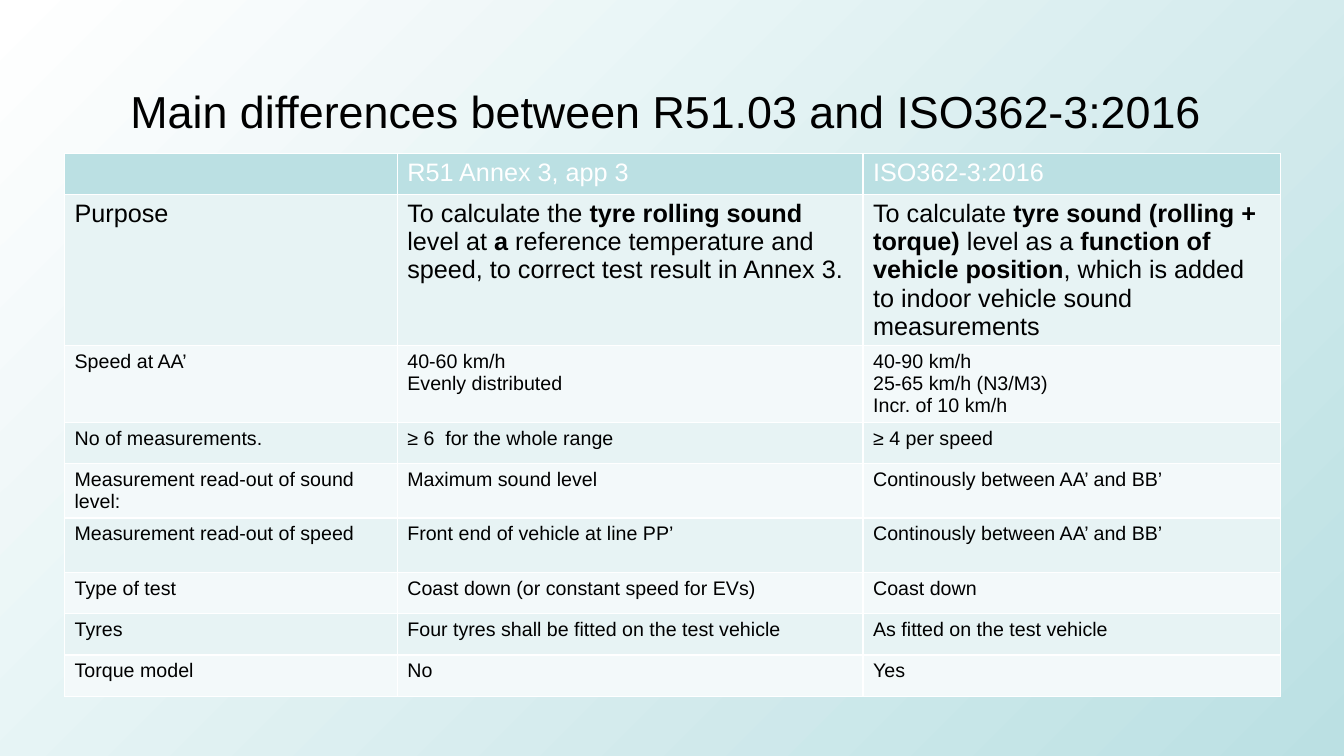
from dataclasses import dataclass
from pptx import Presentation
from pptx.dml.color import RGBColor
from pptx.enum.text import MSO_ANCHOR, MSO_AUTO_SIZE, PP_ALIGN
from pptx.util import Inches, Pt

TITLE = "Main differences between R51.03 and ISO362-3:2016 "
ROWS = [
    ("", "R51 Annex 3, app 3", "ISO362-3:2016"),
    ("Purpose",
     "To calculate the *tyre rolling sound *level at *a *reference temperature and speed, "
     "to correct test result in Annex 3.",
     "To calculate *tyre sound (rolling + torque)* level as a *function of vehicle position*, "
     "which is added to indoor vehicle sound measurements"),
    ("Speed at AA’", "40-60 km/h\nEvenly distributed",
     "40-90 km/h\n25-65 km/h (N3/M3)\nIncr. of 10 km/h"),
    ("No of measurements.", "≥ 6  for the whole range", "≥ 4 per speed"),
    ("Measurement read-out of sound level:", "Maximum sound level",
     "Continously between AA’ and BB’"),
    ("Measurement read-out of speed", "Front end of vehicle at line PP’",
     "Continously between AA’ and BB’"),
    ("Type of test", "Coast down (or constant speed for EVs)", "Coast down"),
    ("Tyres", "Four tyres shall be fitted on the test vehicle", "As fitted on the test vehicle"),
    ("Torque model", "No", "Yes"),
]
WIDTHS = (3.3, 4.62, 4.14)
BASE = 0.41
TALL = {1: 1.5, 2: 0.76, 4: 0.54, 5: 0.54}


@dataclass(frozen=True)
class Theme:
    font: str = "Arial"
    ink: str = "000000"
    white: str = "FFFFFF"
    teal: str = "BBE0E3"
    bands: tuple = ("F3F9FA", "E7F3F4")
    title: int = 32
    large: int = 18
    small: int = 14


THEME = Theme()


def style(font, size, color, bold=False):
    font.name = THEME.font
    font.size = Pt(size)
    font.bold = bold
    font.color.rgb = RGBColor.from_string(color)


def paint(slide):
    fill = slide.background.fill
    fill.gradient()
    fill.gradient_angle = 315
    for stop, place, color in zip(fill.gradient_stops, (0, 1), (THEME.white, THEME.teal)):
        stop.position = place
        stop.color.rgb = RGBColor.from_string(color)


def head(slide):
    title = slide.shapes.title
    title.left, title.top = Inches(0.92), Inches(0.72)
    title.width, title.height = Inches(11.5), Inches(0.54)
    frame = title.text_frame
    frame.text = TITLE
    frame.auto_size = MSO_AUTO_SIZE.NONE
    frame.vertical_anchor = MSO_ANCHOR.TOP
    frame.margin_top = Inches(0.11)
    para = frame.paragraphs[0]
    para.alignment = PP_ALIGN.CENTER
    style(para.runs[0].font, THEME.title, THEME.ink)


def write(cell, text, size, color):
    frame = cell.text_frame
    frame.text = text.replace("*", "")
    for para, line in zip(frame.paragraphs, text.split("\n")):
        style(para.font, size, color)
        para.text = ""
        for part, words in enumerate(line.split("*")):
            if words:
                run = para.add_run()
                run.text = words
                style(run.font, size, color, part % 2 == 1)


def grid(slide):
    highs = [TALL.get(row, BASE) for row in range(len(ROWS))]
    table = slide.shapes.add_table(
        len(ROWS), len(WIDTHS), Inches(0.64), Inches(1.52),
        Inches(sum(WIDTHS)), Inches(sum(highs))).table
    for col, width in zip(table.columns, WIDTHS):
        col.width = Inches(width)
    for row, texts in enumerate(ROWS):
        table.rows[row].height = Inches(highs[row])
        size = THEME.large if row < 2 else THEME.small
        color = THEME.ink if row else THEME.white
        band = THEME.bands[row % 2] if row else THEME.teal
        for col, text in enumerate(texts):
            cell = table.cell(row, col)
            cell.fill.solid()
            cell.fill.fore_color.rgb = RGBColor.from_string(band)
            write(cell, text, size, color)


def main():
    deck = Presentation()
    deck.slide_width, deck.slide_height = Inches(13.33), Inches(7.5)
    slide = deck.slides.add_slide(deck.slide_layouts[5])
    paint(slide)
    head(slide)
    grid(slide)
    deck.save("out.pptx")


if __name__ == "__main__":
    main()
